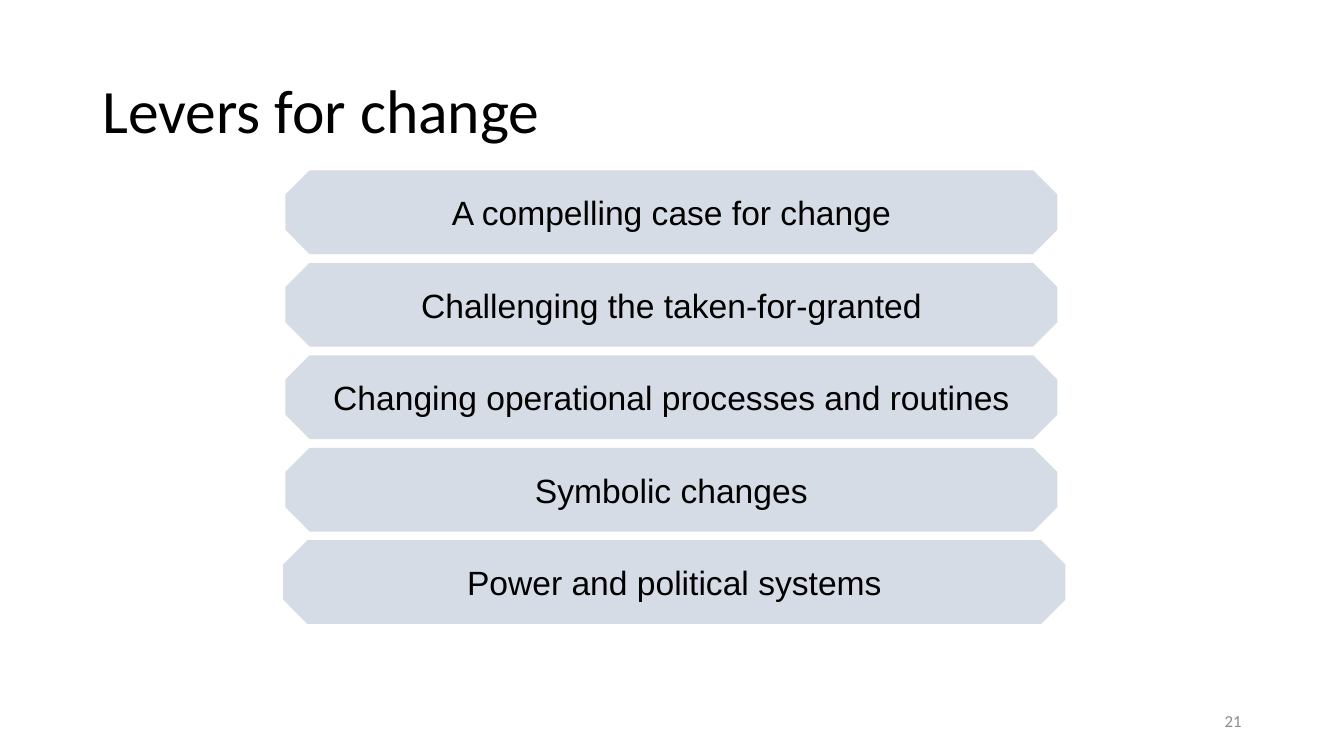
from pptx import Presentation
from pptx.dml.color import RGBColor
from pptx.enum.shapes import MSO_SHAPE
from pptx.enum.text import MSO_ANCHOR, PP_ALIGN
from pptx.util import Pt

BLACK = RGBColor(0x00, 0x00, 0x00)
GREY = RGBColor(0x8C, 0x8C, 0x8C)
PALE_BLUE = RGBColor(0xD6, 0xDC, 0xE5)

TITLE_FONT = {"name": "Calibri", "size": Pt(44)}
LEVER_FONT = {"name": "Arial", "size": Pt(24)}
NUMBER_FONT = {"name": "Calibri", "size": Pt(12)}

LEVERS = [
    "A compelling case for change",
    "Challenging the taken-for-granted",
    "Changing operational processes and routines",
    "Symbolic changes",
    "Power and political systems",
]
FIRST_TOP, PITCH, LEVER_HEIGHT = 121.7, 66.05, 59.8
LEVER_SPAN = (203.8, 551.5)
LAST_LEVER_SPAN = (202.3, 558.7)


def set_text(shape, text, font_format, color, alignment, wrap=True, line_spacing=1.0):
    """Write one vertically centred paragraph into a shape."""
    frame = shape.text_frame
    frame.word_wrap = wrap
    frame.vertical_anchor = MSO_ANCHOR.MIDDLE
    paragraph = frame.paragraphs[0]
    paragraph.alignment = alignment
    paragraph.line_spacing = line_spacing
    run = paragraph.add_run()
    run.text = text
    for attribute, value in font_format.items():
        setattr(run.font, attribute, value)
    run.font.color.rgb = color


def add_label(slide, box, text, font_format, color, alignment, line_spacing=1.0):
    """Add a text box with one paragraph."""
    label = slide.shapes.add_textbox(*map(Pt, box))
    set_text(label, text, font_format, color, alignment, line_spacing=line_spacing)


def add_lever(slide, box, text):
    """Add a filled octagon bar naming a lever."""
    lever = slide.shapes.add_shape(MSO_SHAPE.OCTAGON, *map(Pt, box))
    lever.adjustments[0] = 0.29
    lever.shadow.inherit = False
    lever.fill.solid()
    lever.fill.fore_color.rgb = PALE_BLUE
    lever.line.fill.background()
    set_text(lever, text, LEVER_FONT, BLACK, PP_ALIGN.CENTER, wrap=False)


def main():
    """Build and save the slide."""
    presentation = Presentation()
    presentation.slide_width, presentation.slide_height = Pt(960), Pt(540)
    slide = presentation.slides.add_slide(presentation.slide_layouts[6])

    add_label(slide, (66, 28.8, 828, 104.4), "Levers for change",
              TITLE_FONT, BLACK, PP_ALIGN.LEFT, line_spacing=0.9)
    for index, text in enumerate(LEVERS):
        left, width = LAST_LEVER_SPAN if text == LEVERS[-1] else LEVER_SPAN
        add_lever(slide, (left, FIRST_TOP + index * PITCH, width, LEVER_HEIGHT), text)
    add_label(slide, (678, 500.5, 216, 28.8), "21", NUMBER_FONT, GREY, PP_ALIGN.RIGHT)

    presentation.save("out.pptx")


if __name__ == "__main__":
    main()
